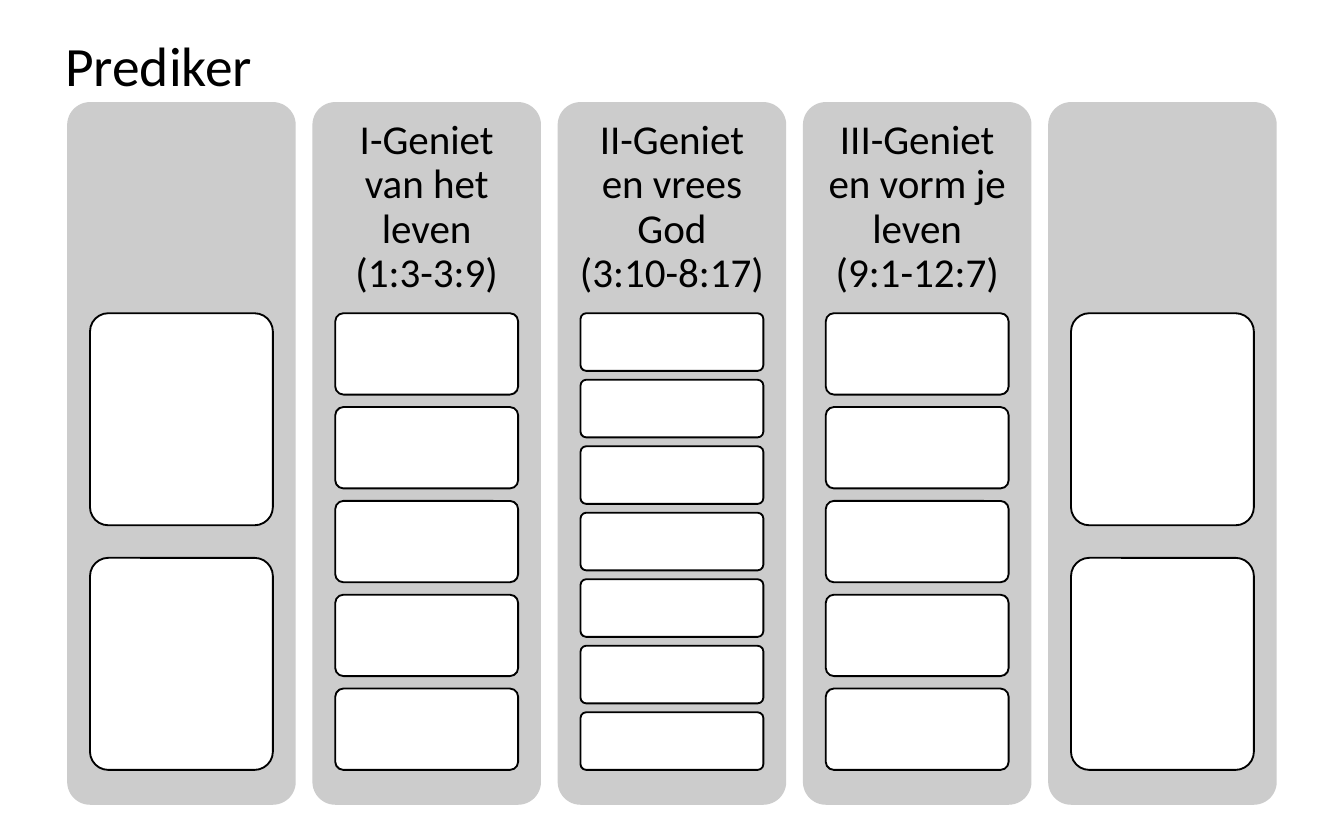
from pptx import Presentation
from pptx.dml.color import RGBColor
from pptx.enum.shapes import MSO_SHAPE
from pptx.enum.text import MSO_ANCHOR, PP_ALIGN
from pptx.util import Cm, Pt

COLORS = {"column": "CCCCCC", "box": "FFFFFF", "ink": "000000"}

# Heading and number of boxes of each column
COLUMNS = [
    ("", 2),
    ("I-Geniet\vvan het leven\v(1:3-3:9)", 5),
    ("II-Geniet\ven vrees God\v(3:10-8:17)", 7),
    ("III-Geniet\ven vorm je leven\v(9:1-12:7)", 5),
    ("", 2),
]
LEFT, TOP, WIDTH, HEIGHT = 1.27, 1.93, 4.32, 13.28
PITCH = 4.635
INSET = WIDTH / 10
BOX_TOP, STACK_HEIGHT = 5.92, 8.63
GAP_RATIO = 1 / 6.5  # gap between boxes relative to box height

prs = Presentation()
prs.slide_width, prs.slide_height = Cm(25.4), Cm(15.875)
s = prs.slides.add_slide(prs.slide_layouts[6])


def add_rounded(x, y, w, h, fill, line=None):
    sp = s.shapes.add_shape(MSO_SHAPE.ROUNDED_RECTANGLE, Cm(x), Cm(y), Cm(w), Cm(h))
    sp.adjustments[0] = 0.1
    sp.shadow.inherit = False
    sp.fill.solid()
    sp.fill.fore_color.rgb = RGBColor.from_string(COLORS[fill])
    if line:
        sp.line.color.rgb = RGBColor.from_string(COLORS[line])
        sp.line.width = Pt(1)
    else:
        sp.line.fill.background()


def add_text(x, y, w, h, text, size, align, margin_x, margin_y):
    tf = s.shapes.add_textbox(Cm(x), Cm(y), Cm(w), Cm(h)).text_frame
    tf.word_wrap = True
    tf.vertical_anchor = MSO_ANCHOR.MIDDLE
    tf.margin_left = tf.margin_right = Cm(margin_x)
    tf.margin_top = tf.margin_bottom = Cm(margin_y)
    p = tf.paragraphs[0]
    p.text = text
    p.alignment = align
    p.line_spacing = 0.9
    for r in p.runs:
        r.font.name = "Calibri"
        r.font.size = Pt(size)
        r.font.color.rgb = RGBColor.from_string(COLORS["ink"])


for i, (heading, count) in enumerate(COLUMNS):
    x = LEFT + i * PITCH
    add_rounded(x, TOP, WIDTH, HEIGHT, "column")
    if heading:
        add_text(x, TOP, WIDTH, BOX_TOP - TOP, heading, 22, PP_ALIGN.CENTER, 0.23, 0.23)
    box_height = STACK_HEIGHT / (count + (count - 1) * GAP_RATIO)
    for j in range(count):
        y = BOX_TOP + j * box_height * (1 + GAP_RATIO)
        add_rounded(x + INSET, y, WIDTH - 2 * INSET, box_height, "box", "ink")

add_text(1.1, 0.64, 21.9, 1.3, "Prediker", 29.7, PP_ALIGN.LEFT, 0.13, 0.08)

prs.save("out.pptx")
